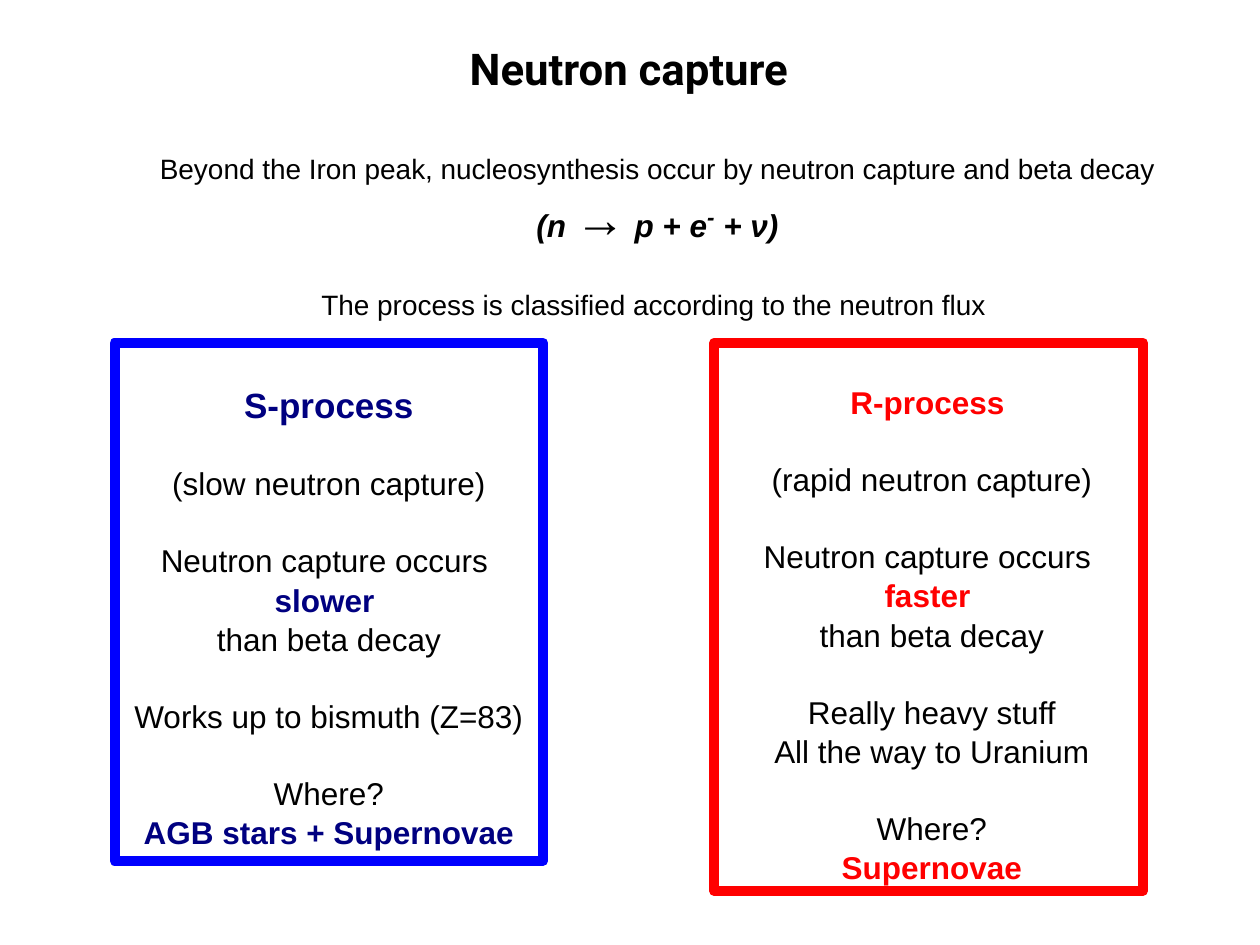
from dataclasses import dataclass

from lxml import etree
from pptx import Presentation
from pptx.dml.color import RGBColor as Rgb
from pptx.enum.shapes import MSO_SHAPE as Shape
from pptx.enum.text import MSO_ANCHOR as Anchor, PP_ALIGN as Align
from pptx.oxml.ns import qn
from pptx.util import Cm, Pt


@dataclass(frozen=True)
class Theme:
    black: Rgb = Rgb(0, 0, 0)
    white: Rgb = Rgb(255, 255, 255)
    blue: Rgb = Rgb(0, 0, 255)
    navy: Rgb = Rgb(0, 0, 128)
    red: Rgb = Rgb(255, 0, 0)
    head: str = "Roboto"
    body: str = "Arial"
    title: int = 25
    arrow: int = 29
    sup: int = 22
    large: int = 20
    text: int = 18
    small: int = 16
    lead: float = 1.04  # line spacing
    gap: float = 21.6  # space above a new group of lines


T = Theme()
deck = Presentation()
deck.slide_width, deck.slide_height = Cm(25.4), Cm(19.05)
slide = deck.slides.add_slide(deck.slide_layouts[6])


def add_box(left, top, width, height, side, above, below):
    """Add a text box with the given insets and return its text frame."""
    box = slide.shapes.add_textbox(Cm(left), Cm(top), Cm(width), Cm(height))
    frame = box.text_frame
    frame.word_wrap = True
    frame.vertical_anchor = Anchor.TOP
    frame.margin_left = frame.margin_right = Cm(side)
    frame.margin_top, frame.margin_bottom = Cm(above), Cm(below)
    return frame


def add_line(frame, runs, gap=0, lead=T.lead, face=T.body):
    """Add a centred paragraph; a run is (text, size, colour, bold, italic)."""
    first = frame.paragraphs[0]
    para = frame.add_paragraph() if first.runs else first
    para.alignment = Align.CENTER
    para.line_spacing = lead
    if gap:
        para.space_before = Pt(gap)
    for text, size, color, bold, italic in runs:
        run = para.add_run()
        run.text = text
        font = run.font
        font.name, font.size = face, Pt(size)
        font.bold, font.italic = bold, italic
        font.color.rgb = color
    return para


# Title
title = add_box(4.04, 0.58, 17.27, 1.47, 0.23, 0.1, 0.1)
add_line(title, [("Neutron capture", T.title, T.black, True, False)],
         lead=1.16, face=T.head)

# Introduction with the decay formula
intro = add_box(2.31, 2.87, 21.89, 6.53, 0.23, 0.15, 0.1)
add_line(intro, [("Beyond the Iron peak, nucleosynthesis occur by neutron "
                  "capture and beta decay", T.small, T.black, False, False)])
parts = [("(n ", T.text), ("→", T.arrow), (" p + e", T.text),
         ("-", T.sup), (" + ν)", T.text)]
decay = add_line(intro, [(text, size, T.black, True, True)
                         for text, size in parts])
decay.runs[3].font._element.set("baseline", "33000")
add_line(intro, [("The process is classified according to the neutron flux ",
                  T.small, T.black, False, False)], gap=T.gap)

# Process panels: each group of lines is set off by a gap, * marks accents
slow = [["*S-process"], ["(slow neutron capture)"],
        ["Neutron capture occurs ", "*slower ", "than beta decay"],
        ["Works up to bismuth (Z=83)"],
        ["Where?", "*AGB stars + Supernovae"]]
rapid = [["*R-process "], ["(rapid neutron capture)"],
         ["Neutron capture occurs ", "*faster ", "than beta decay"],
         ["Really heavy stuff", "All the way to Uranium"],
         ["Where?", "*Supernovae"]]
panels = [
    (2.31, 10.44, T.blue, 2.31, 8.64, 8.28, T.navy, T.large, slow),
    (14.4, 11.05, T.red, 14.76, 8.05, 9.5, T.red, T.text, rapid),
]
for left, tall, edge, inset, wide, high, accent, top_size, groups in panels:
    panel = slide.shapes.add_shape(Shape.ROUNDED_RECTANGLE, Cm(left), Cm(6.91),
                                   Cm(8.64), Cm(tall))
    panel.adjustments[0] = 0
    panel.shadow.inherit = False
    panel.fill.solid()
    panel.fill.fore_color.rgb = T.white
    panel.line.color.rgb = edge
    panel.line.width = Pt(5.75)
    etree.SubElement(panel._element.spPr.find(qn("a:ln")), qn("a:round"))

    frame = add_box(inset, 7.49, wide, high, 0.28, 0.2, 0.15)
    for i, group in enumerate(groups):
        for j, text in enumerate(group):
            strong = text.startswith("*")
            run = (text.lstrip("*"), T.text if i else top_size,
                   accent if strong else T.black, strong, False)
            add_line(frame, [run], gap=T.gap if i and not j else 0)

deck.save("out.pptx")
